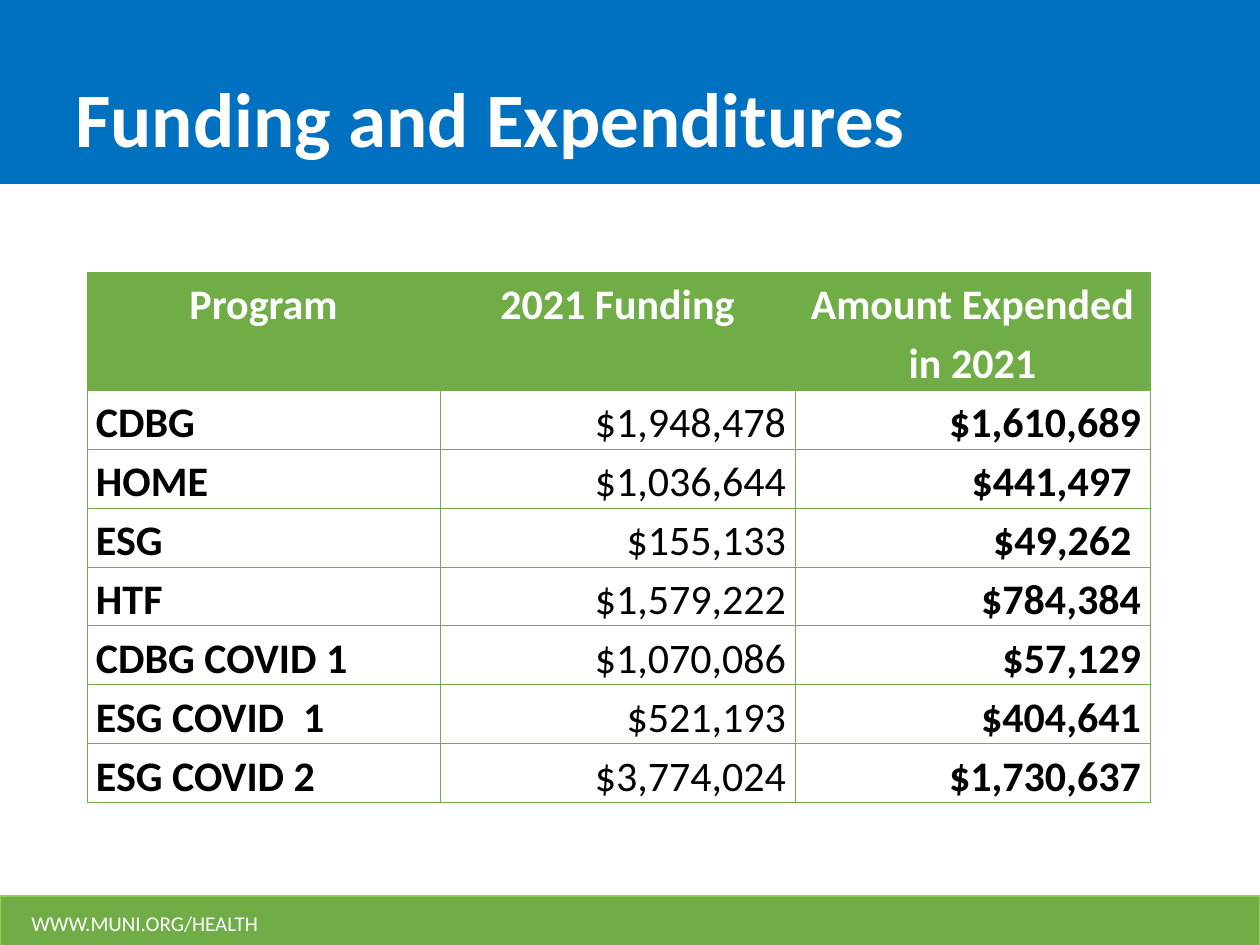
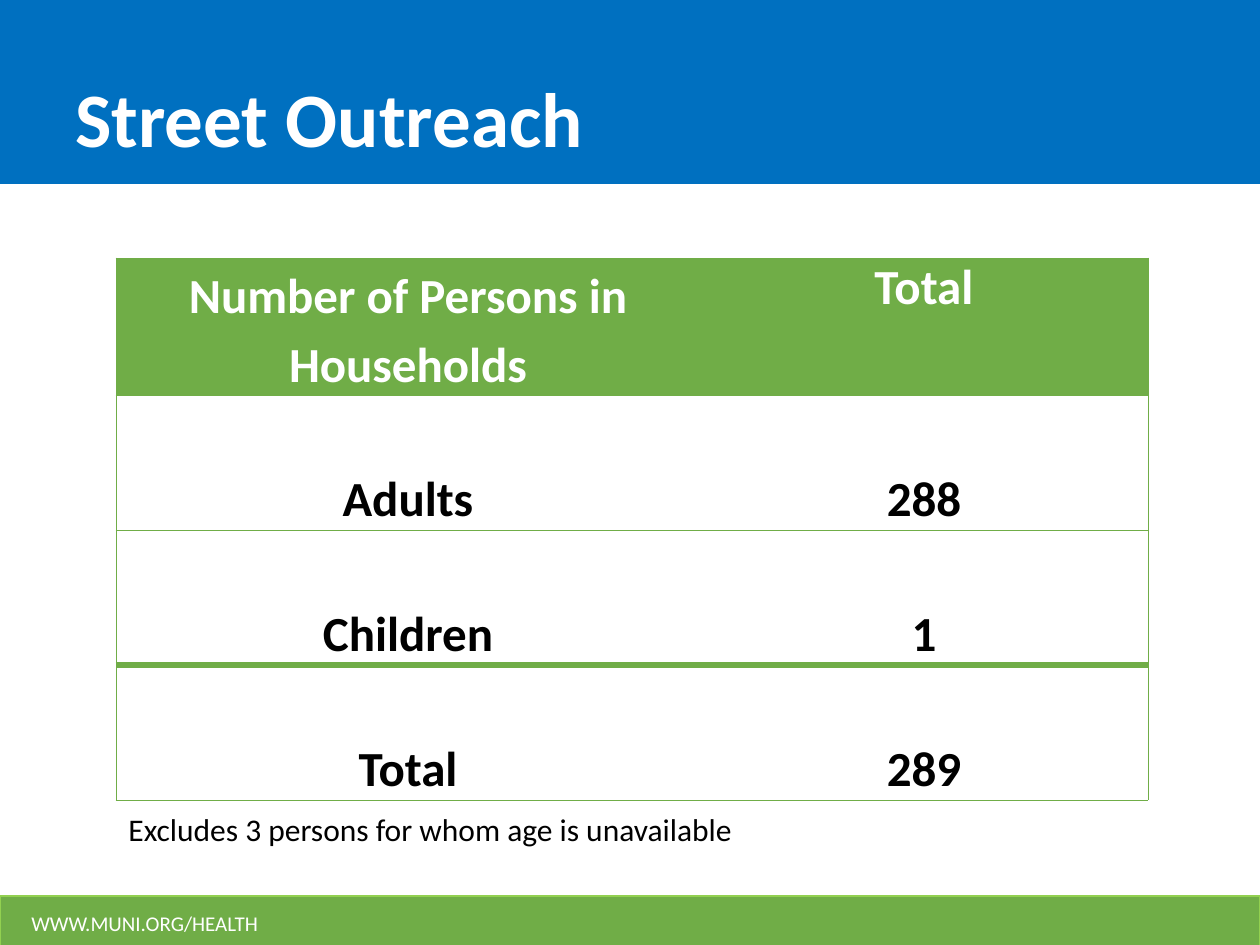
from dataclasses import dataclass

from lxml.etree import SubElement
from pptx import Presentation
from pptx.dml.color import RGBColor
from pptx.enum.shapes import MSO_SHAPE as SHAPE
from pptx.enum.text import MSO_ANCHOR as ANCHOR, PP_ALIGN as ALIGN
from pptx.oxml.ns import qn
from pptx.util import Emu, Pt

# Shared look
BLUE, GREEN, LIME = "0070C0", "70AD47", "92D050"
WHITE, BLACK = "FFFFFF", "000000"
FONT = "Calibri"
SLIDE_W, SLIDE_H = 1260, 945
THIN, THICK = 0.5, 4


@dataclass
class Column:
    width: int
    align: ALIGN = ALIGN.CENTER
    bold: bool = True


@dataclass
class Grid:
    left: int
    top: int
    columns: list[Column]
    header_height: int
    row_height: int
    rows: list[tuple[str, ...]]
    size: int
    inset: int
    inner_verticals: bool = True
    total_row: bool = False


def px(n: int) -> Emu:
    return Emu(round(n * 914400 / 126))


def rgb(color: str) -> RGBColor:
    return RGBColor.from_string(color)


def write(tf, text: str, size: int, color: str = BLACK, bold: bool = False,
          align: ALIGN = ALIGN.LEFT, line: float | None = None,
          after: int | None = None) -> None:
    p = tf.paragraphs[0]
    p.alignment = align
    if line is not None:
        p.line_spacing = line
    if after is not None:
        p.space_after = Pt(after)
    r = p.add_run()
    r.text = text
    r.font.name, r.font.size, r.font.bold = FONT, Pt(size), bold
    r.font.color.rgb = rgb(color)


def add_band(s, top: int, height: int, fill: str, line: str | None = None) -> None:
    sp = s.shapes.add_shape(SHAPE.RECTANGLE, 0, px(top), px(SLIDE_W), px(height))
    sp.shadow.inherit = False
    sp.fill.solid()
    sp.fill.fore_color.rgb = rgb(fill)
    if line:
        sp.line.color.rgb = rgb(line)
        sp.line.width = Pt(1)
    else:
        sp.line.fill.background()


def add_text(s, left: int, top: int, width: int, height: int, text: str,
             anchor: ANCHOR = ANCHOR.TOP, wrap: bool = True, **fmt) -> None:
    tf = s.shapes.add_textbox(px(left), px(top), px(width), px(height)).text_frame
    tf.word_wrap = wrap
    tf.vertical_anchor = anchor
    write(tf, text, **fmt)


def set_borders(cell, left: float, right: float, top: float, bottom: float) -> None:
    """Draw green cell edges with widths in points; 0 hides an edge."""
    tc_pr = cell._tc.get_or_add_tcPr()
    for side, width in zip("LRTB", (left, right, top, bottom)):
        ln = SubElement(tc_pr, qn(f"a:ln{side}"), w=str(Pt(width)))
        if width:
            fill = SubElement(ln, qn("a:solidFill"))
            SubElement(fill, qn("a:srgbClr"), val=GREEN)
        else:
            SubElement(ln, qn("a:noFill"))


def add_grid(s, grid: Grid) -> None:
    n_rows, n_cols = len(grid.rows), len(grid.columns)
    heights = [grid.header_height] + [grid.row_height] * (n_rows - 1)
    width = sum(col.width for col in grid.columns)
    table = s.shapes.add_table(n_rows, n_cols, px(grid.left), px(grid.top),
                               px(width), px(sum(heights))).table
    table.first_row = table.horz_banding = False
    for c, col in enumerate(grid.columns):
        table.columns[c].width = px(col.width)

    # Horizontal rules, from the top edge to the bottom edge
    rules = [THIN] * (n_rows + 1)
    if grid.total_row:
        rules[-2] = THICK
    inner = THIN if grid.inner_verticals else 0
    verticals = [THIN] + [inner] * (n_cols - 1) + [THIN]

    for i, values in enumerate(grid.rows):
        table.rows[i].height = px(heights[i])
        header = i == 0
        for c, (col, text) in enumerate(zip(grid.columns, values)):
            cell = table.cell(i, c)
            cell.margin_left = cell.margin_right = px(grid.inset)
            cell.margin_top = cell.margin_bottom = 0
            set_borders(cell, verticals[c], verticals[c + 1], rules[i], rules[i + 1])
            if header:
                cell.fill.solid()
                cell.fill.fore_color.rgb = rgb(GREEN)
                cell.vertical_anchor = ANCHOR.TOP
                # A one-word heading in the last column keeps single spacing
                line = 1.0 if text == "Total" else 1.15
                write(cell.text_frame, text, size=grid.size, color=WHITE, bold=True,
                      align=ALIGN.CENTER, line=line)
            else:
                cell.fill.background()
                cell.vertical_anchor = ANCHOR.BOTTOM
                write(cell.text_frame, text, size=grid.size, bold=col.bold,
                      align=col.align, line=1.15, after=10)


def add_slide(prs, title: str):
    s = prs.slides.add_slide(prs.slide_layouts[6])
    add_band(s, 0, 184, BLUE)
    add_band(s, 896, 50, GREEN, LIME)
    add_text(s, 19, 898, 339, 50, "WWW.MUNI.ORG/HEALTH", ANCHOR.MIDDLE,
             size=12, color=WHITE)
    add_text(s, 63, 0, 1110, 169, title, ANCHOR.BOTTOM,
             size=44, color=WHITE, bold=True)
    return s


FUNDING = Grid(
    left=87, top=272, header_height=118, row_height=59, size=24, inset=9,
    columns=[Column(353, ALIGN.LEFT), Column(355, ALIGN.RIGHT, bold=False),
             Column(355, ALIGN.RIGHT)],
    rows=[
        ("Program", "2021 Funding", "Amount Expended in 2021"),
        ("CDBG", "$1,948,478", "$1,610,689"),
        ("HOME", "$1,036,644", "$441,497 "),
        ("ESG", "$155,133", "$49,262 "),
        ("HTF", "$1,579,222", "$784,384"),
        ("CDBG COVID 1", "$1,070,086", "$57,129"),
        ("ESG COVID  1", "$521,193", "$404,641"),
        ("ESG COVID 2", "$3,774,024", "$1,730,637"),
    ])

OUTREACH = Grid(
    left=116, top=258, header_height=137, row_height=135, size=28, inset=10,
    columns=[Column(584), Column(448)], inner_verticals=False, total_row=True,
    rows=[
        ("Number of Persons in Households", "Total"),
        ("Adults", "288"),
        ("Children", "1"),
        ("Total", "289"),
    ])


def main() -> None:
    prs = Presentation()
    prs.slide_width, prs.slide_height = px(SLIDE_W), px(SLIDE_H)

    # Funding and expenditures
    s = add_slide(prs, "Funding and Expenditures")
    add_grid(s, FUNDING)

    # Street outreach
    s = add_slide(prs, "Street Outreach")
    add_grid(s, OUTREACH)
    add_text(s, 116, 804, 636, 50, "Excludes 3 persons for whom age is unavailable",
             wrap=False, size=18)

    prs.save("out.pptx")


if __name__ == "__main__":
    main()
